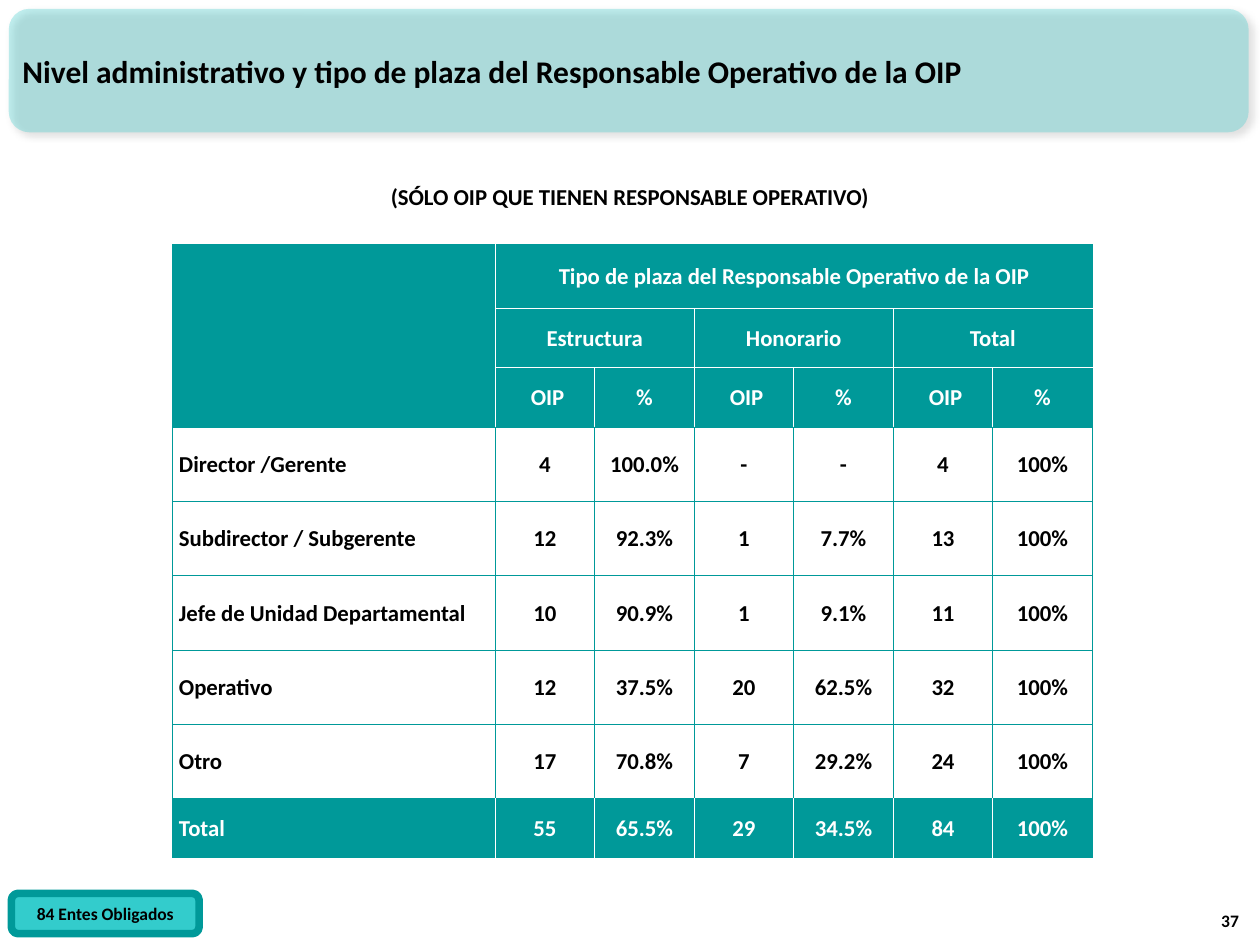
"""Build the slide on administrative level and post type of the OIP operating officer."""
from itertools import product

from lxml.etree import SubElement
from pptx import Presentation
from pptx.dml.color import RGBColor
from pptx.enum.shapes import MSO_SHAPE
from pptx.enum.text import MSO_ANCHOR, PP_ALIGN
from pptx.oxml import parse_xml
from pptx.oxml.ns import nsdecls, qn
from pptx.util import Inches, Pt

BLACK = RGBColor(0x00, 0x00, 0x00)
WHITE = RGBColor(0xFF, 0xFF, 0xFF)
TEAL = RGBColor(0x00, 0x99, 0x99)
AQUA = RGBColor(0x33, 0xCC, 0xCC)

HEADER_ROWS = 3
COLUMN_WIDTHS = [2.56] + [0.79] * 6
ROW_HEIGHTS = [0.51, 0.47, 0.47] + [0.59] * 5 + [0.47]
LAST_ROW = len(ROW_HEIGHTS) - 1
LAST_COLUMN = len(COLUMN_WIDTHS) - 1
ROWS = [
    ["", "Tipo de plaza del Responsable Operativo de la OIP", "", "", "", "", ""],
    ["", "Estructura", "", "Honorario", "", " Total ", ""],
    [""] + [" OIP", "%"] * 3,
    [" Director /Gerente", "4", "100.0%", "-", "-", "4", "100%"],
    [" Subdirector / Subgerente", "12", "92.3%", "1", "7.7%", "13", "100%"],
    [" Jefe de Unidad Departamental", "10", "90.9%", "1", "9.1%", "11", "100%"],
    [" Operativo", "12", "37.5%", "20", "62.5%", "32", "100%"],
    [" Otro", "17", "70.8%", "7", "29.2%", "24", "100%"],
    [" Total", "55", "65.5%", "29", "34.5%", "84", "100%"],
]
MERGES = [((0, 0), (2, 0)), ((0, 1), (0, 6))] + [((1, c), (1, c + 1)) for c in (1, 3, 5)]


def is_dark(row):
    return row < HEADER_ROWS or row == LAST_ROW


def block_of(row, column):
    for (top, left), (bottom, right) in MERGES:
        if top <= row <= bottom and left <= column <= right:
            return top, left
    return row, column


def border_color(row, column, other_row, other_column):
    inside = 0 <= other_row <= LAST_ROW and 0 <= other_column <= LAST_COLUMN
    both_dark = is_dark(row) and is_dark(other_row)
    separate = block_of(row, column) != block_of(other_row, other_column)
    return WHITE if inside and both_dark and separate else TEAL


class SlideBuilder:
    def __init__(self, page, font_name):
        self.page = page
        self.font_name = font_name

    def fill_text(self, frame, text, size, color=BLACK, align=PP_ALIGN.LEFT):
        para = frame.paragraphs[0]
        para.text = text
        para.alignment = align
        font = para.font
        font.name, font.size, font.bold = self.font_name, Pt(size), True
        font.color.rgb = color

    def text(self, at, text, size, align=PP_ALIGN.LEFT, anchor=MSO_ANCHOR.TOP):
        frame = self.page.shapes.add_textbox(*map(Inches, at)).text_frame
        frame.word_wrap = True
        frame.vertical_anchor = anchor
        self.fill_text(frame, text, size, align=align)

    def rounded_box(self, at):
        box = self.page.shapes.add_shape(MSO_SHAPE.ROUNDED_RECTANGLE, *map(Inches, at))
        box.shadow.inherit = False
        box.fill.solid()
        box.fill.fore_color.rgb = AQUA
        return box

    def banner(self, at):
        box = self.rounded_box(at)
        box.line.fill.background()
        properties = box.element.spPr
        color = properties.find(qn("a:solidFill")).find(qn("a:srgbClr"))
        SubElement(color, qn("a:alpha"), val="30000")
        effects = properties.find(qn("a:effectLst"))
        effects.append(parse_xml(
            f'<a:outerShdw {nsdecls("a")} blurRad="{Pt(4)}" dist="{Pt(3)}" dir="2700000" '
            'algn="tl" rotWithShape="0"><a:srgbClr val="000000">'
            '<a:alpha val="40000"/></a:srgbClr></a:outerShdw>'))

    def badge(self, at, text, size):
        box = self.rounded_box(at)
        box.line.color.rgb = TEAL
        box.line.width = Pt(4.33)
        frame = box.text_frame
        frame.word_wrap = True
        frame.vertical_anchor = MSO_ANCHOR.MIDDLE
        self.fill_text(frame, text, size, align=PP_ALIGN.CENTER)

    def borders(self, cell, row, column):
        neighbours = {
            "lnL": (row, column - 1),
            "lnR": (row, column + cell.span_width),
            "lnT": (row - 1, column),
            "lnB": (row + cell.span_height, column),
        }
        for side, neighbour in neighbours.items():
            color = border_color(row, column, *neighbour)
            cell._tc.get_or_add_tcPr().append(parse_xml(
                f'<a:{side} {nsdecls("a")} w="{Pt(0.5)}"><a:solidFill>'
                f'<a:srgbClr val="{color}"/></a:solidFill></a:{side}>'))

    def table(self, left, top):
        table = self.page.shapes.add_table(
            len(ROWS), len(COLUMN_WIDTHS), Inches(left), Inches(top),
            Inches(sum(COLUMN_WIDTHS)), Inches(sum(ROW_HEIGHTS))).table
        table.first_row = table.horz_banding = False
        for column, width in zip(table.columns, COLUMN_WIDTHS):
            column.width = Inches(width)
        for row, height in zip(table.rows, ROW_HEIGHTS):
            row.height = Inches(height)
        for start, end in MERGES:
            table.cell(*start).merge(table.cell(*end))
        for row, column in product(range(len(ROWS)), range(len(COLUMN_WIDTHS))):
            cell = table.cell(row, column)
            self.borders(cell, row, column)
            if is_dark(row):
                cell.fill.solid()
                cell.fill.fore_color.rgb = TEAL
            else:
                cell.fill.background()
            cell.margin_left = cell.margin_right = cell.margin_top = Inches(0.01)
            cell.margin_bottom = 0
            cell.vertical_anchor = MSO_ANCHOR.MIDDLE
            self.fill_text(cell.text_frame, ROWS[row][column], 13,
                           WHITE if is_dark(row) else BLACK,
                           PP_ALIGN.CENTER if column else PP_ALIGN.LEFT)


def main():
    deck = Presentation()
    deck.slide_width, deck.slide_height = Inches(10), Inches(7.5)
    page = deck.slides.add_slide(deck.slide_layouts[6])
    builder = SlideBuilder(page, "Calibri")
    builder.banner((0.07, 0.07, 9.84, 0.98))
    builder.text((9.45, 7.04, 0.48, 0.4), "37", 10, PP_ALIGN.RIGHT, MSO_ANCHOR.BOTTOM)
    builder.text((0.08, 0.09, 9.29, 0.94),
                 "Nivel administrativo y tipo de plaza del Responsable Operativo de la OIP",
                 18, anchor=MSO_ANCHOR.MIDDLE)
    builder.text((1.84, 1.4, 6.31, 0.32), "(SÓLO OIP QUE TIENEN RESPONSABLE OPERATIVO)",
                 13, PP_ALIGN.CENTER)
    builder.badge((0.09, 7.09, 1.49, 0.32), "84 Entes Obligados", 10)
    builder.table(1.37, 1.94)
    deck.save("out.pptx")


if __name__ == "__main__":
    main()
